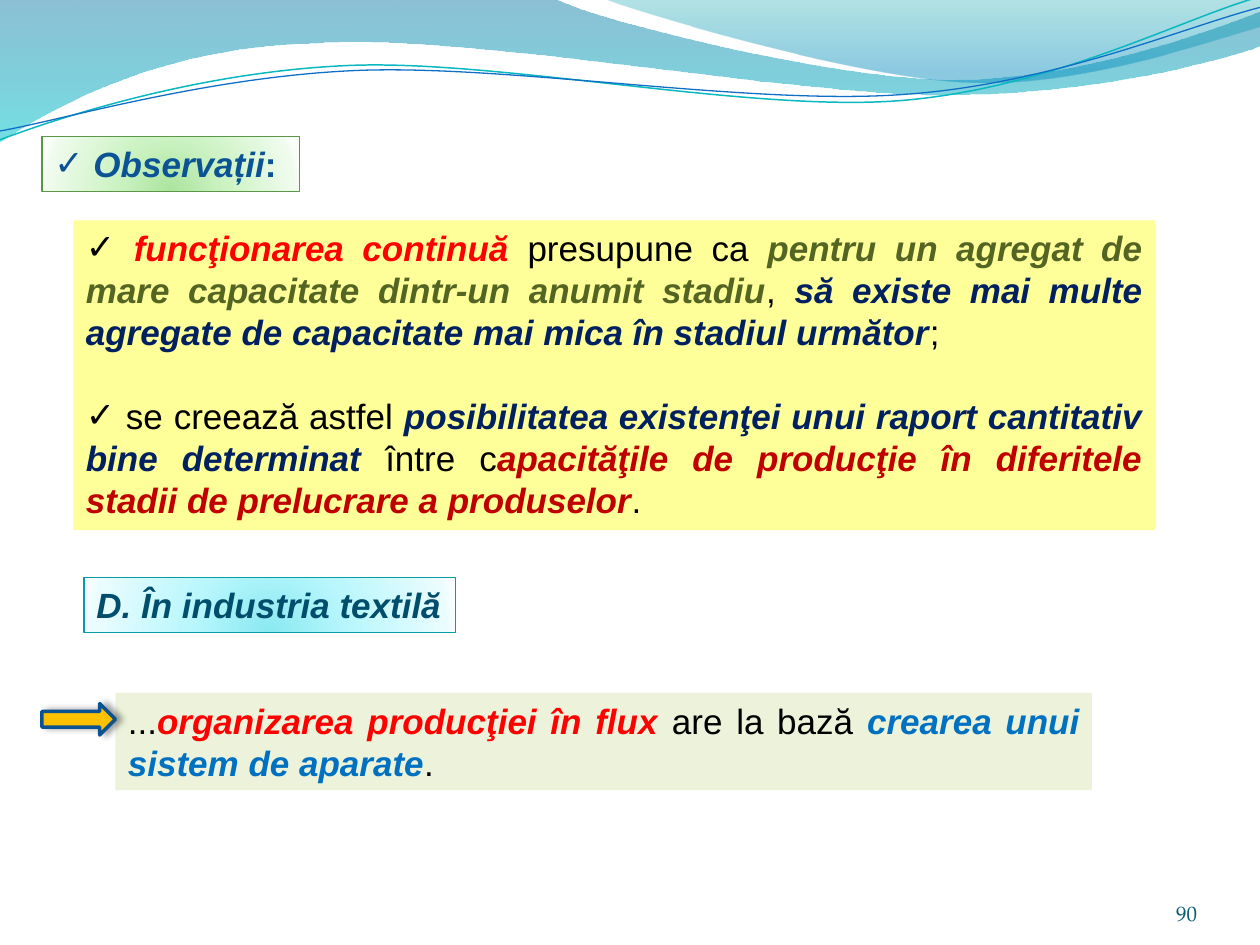
import math

import pptx
import pptx.util
import pptx.dml.color
import pptx.enum.shapes
import pptx.enum.text
import pptx.oxml
import pptx.oxml.ns

UNIT = pptx.util.Inches(1) // 12  # grid of 120 columns by 90 rows
SHAPE = pptx.enum.shapes.MSO_SHAPE
ALIGN = pptx.enum.text.PP_ALIGN
DOWN = '<a:lin ang="5400000" scaled="0"/>'
GLOW = ('<a:path path="circle"><a:fillToRect l="50000" t="130000" '
        'r="50000" b="-30000"/></a:path>')
BLACK, RED, NAVY = "000000", "FF0000", "002060"

# Each wave: start point, then straight lines (2 numbers) or curves (6),
# in tenths of the band's width and whole heights of the band.
SWELL = [(0, 0), (4.4, -0.01), (4.76, 0.17, 6.64, 0.63, 7.58, 0.63),
         (8.53, 0.63, 9.58, 0.26, 10, 0.09), (10.01, 0.36),
         (9.83, 0.44, 8.7, 0.76, 7.46, 0.75),
         (6.22, 0.75, 3.82, 0.28, 2.57, 0.34),
         (1.29, 0.36, 0.46, 0.83, -0.01, 1.13), (0, 0)]
CREST = [(4.79, -0.01), (5.09, 0.11, 6.82, 0.62, 7.69, 0.65),
         (8.56, 0.69, 9.61, 0.32, 10, 0.21), (10, 0), (4.79, -0.01)]
TEAL = [(0, 1.11), (0.48, 0.93, 1.58, 0.57, 2.77, 0.52),
        (3.95, 0.47, 5.93, 0.89, 7.13, 0.8),
        (8.33, 0.71, 9.38, 0.15, 9.98, -0.02)]
BLUE = [(0, 1.04), (0.47, 0.96, 1.64, 0.61, 2.83, 0.56),
        (4.03, 0.51, 5.97, 0.84, 7.17, 0.75),
        (8.36, 0.67, 9.41, 0.21, 10, 0.06)]


def color(code):
    return pptx.dml.color.RGBColor.from_string(code)


def node(tag, body="", attrs=""):
    space = pptx.oxml.ns.nsdecls("a")
    return pptx.oxml.parse_xml(f"<a:{tag} {space} {attrs}>{body}</a:{tag}>")


def tint(code, alpha):
    return (f'<a:srgbClr val="{code}"><a:alpha val="{alpha * 1000}"/>'
            '</a:srgbClr>')


def swap(shape, tag, new):
    old = shape._element.spPr.find(pptx.oxml.ns.qn(tag))
    old.getparent().replace(old, new)


def blend(shape, stops, way):
    """Fill with a gradient of (position, colour, opacity) stops."""
    marks = "".join(f'<a:gs pos="{pos * 1000}">{tint(code, alpha)}</a:gs>'
                    for pos, code, alpha in stops)
    shape.fill.background()
    swap(shape, "a:noFill", node("gradFill", f"<a:gsLst>{marks}</a:gsLst>{way}"))


def edge(shape, code=None, width=0.75):
    if code:
        shape.line.color.rgb = color(code)
        shape.line.width = pptx.util.Pt(width)
    else:
        shape.line.fill.background()


def block(slide, box, kind=SHAPE.RECTANGLE, fill=None, line=None, width=0.75):
    shape = slide.shapes.add_shape(kind, *(round(n * UNIT) for n in box))
    shape.shadow.inherit = False
    if fill:
        shape.fill.solid()
        shape.fill.fore_color.rgb = color(fill)
    edge(shape, line, width)
    return shape


def bend(shape, parts):
    """Join each three lines that stand for a curve into one."""
    qn = pptx.oxml.ns.qn
    lines = iter(list(shape._element.spPr.iter(qn("a:lnTo"))))
    for part in parts:
        group = [next(lines) for _ in range(len(part) // 2)]
        if len(group) == 3:
            curve = node("cubicBezTo")
            group[0].addprevious(curve)
            for line in group:
                curve.append(line[0])
                line.getparent().remove(line)


def turn(spots, angle):
    """Rotate points about the middle of their bounds."""
    mid_x, mid_y = ((min(axis) + max(axis)) / 2 for axis in zip(*spots))
    cos, sin = math.cos(math.radians(angle)), math.sin(math.radians(angle))
    return [(mid_x + (x - mid_x) * cos - (y - mid_y) * sin,
             mid_y + (x - mid_x) * sin + (y - mid_y) * cos) for x, y in spots]


def wave(slide, box, parts, stops=None, line=None, width=0.75, tilt=0):
    left, top, wide, high = box
    spots = [((left + x * wide / 10) * UNIT, (top + y * high) * UNIT)
             for part in parts for x, y in zip(part[::2], part[1::2])]
    spots = [(round(x), round(y)) for x, y in turn(spots, -tilt)]
    pen = slide.shapes.build_freeform(*spots[0])
    pen.add_line_segments(spots[1:], close=bool(stops))
    shape = pen.convert_to_shape()
    bend(shape, parts[1:])
    shape.rotation = tilt
    shape.shadow.inherit = False
    if stops:
        blend(shape, stops, DOWN)
    else:
        shape.fill.background()
    edge(shape, line, width)


def banner(slide, box):
    wave(slide, box, SWELL, [(0, "0074A1", 45), (100, "00C6CF", 55)])
    wave(slide, box, CREST, [(0, "00A1A9", 30), (80, "008BBF", 45)])
    wave(slide, box, TEAL, line="0AB8BF", width=0.85, tilt=-2.7)
    wave(slide, box, BLUE, line="0F6FC6", tilt=-2.7)


def write(shape, paras, align=ALIGN.JUSTIFY, tick=False, wrap=True, gap=0):
    """Set paragraphs of (text, colour, bold, italic) runs."""
    frame = shape.text_frame
    frame.word_wrap = wrap
    frame.auto_size = pptx.enum.text.MSO_AUTO_SIZE.SHAPE_TO_FIT_TEXT
    frame.vertical_anchor = pptx.enum.text.MSO_ANCHOR.TOP
    for i, runs in enumerate(paras):
        para = frame.add_paragraph() if i else frame.paragraphs[0]
        para.alignment = align
        if i:
            para.space_before = pptx.util.Pt(gap)
        if tick:
            props = para._p.get_or_add_pPr()
            props.append(node("buFont", attrs='typeface="Arial"'))
            props.append(node("buChar", attrs='char="✓"'))
        for text, code, bold, italic in runs:
            run = para.add_run()
            run.text = text
            font = run.font
            font.name, font.size = "Arial", pptx.util.Pt(20)
            font.bold, font.italic = bold, italic
            font.color.rgb = color(code)


def plain(text):
    return text, BLACK, False, False


def strong(text, code):
    return text, code, True, True


def label(slide, box, runs, codes, line, **style):
    shape = block(slide, box, line=line)
    blend(shape, [(pos, code, 100) for pos, code in zip((0, 43, 93, 100), codes)], GLOW)
    write(shape, [runs], wrap=False, **style)


def arrow(slide, box):
    shape = block(slide, box, SHAPE.RIGHT_ARROW, "FFC000", "0B5292", 2)
    blur, dist = int(pptx.util.Pt(4)), int(pptx.util.Pt(3))
    swap(shape, "a:effectLst", node("effectLst", (
        f'<a:outerShdw blurRad="{blur}" dist="{dist}" dir="0">'
        f'{tint(BLACK, 40)}</a:outerShdw>')))


def number(slide, box, text):
    shape = slide.shapes.add_textbox(*(round(n * UNIT) for n in box))
    frame = shape.text_frame
    frame.word_wrap = True
    frame.margin_left = frame.margin_right = 0
    frame.margin_top = frame.margin_bottom = 0
    frame.vertical_anchor = pptx.enum.text.MSO_ANCHOR.BOTTOM
    frame.text = text
    para = frame.paragraphs[0]
    para.alignment = ALIGN.RIGHT
    font = para.runs[0].font
    font.name, font.size = "TeX Gyre Pagella", pptx.util.Pt(12)
    font.color.rgb = color("045D75")


def main():
    deck = pptx.Presentation()
    deck.slide_width, deck.slide_height = 120 * UNIT, 90 * UNIT
    slide = deck.slides.add_slide(deck.slide_layouts[6])
    banner(slide, (0, 0, 120, 12))
    number(slide, (104, 83.4, 10, 4.8), "90")
    write(block(slide, (7, 21, 103, 29.5), fill="FFFF99"), [
        [plain(" "), strong("funcţionarea continuă ", RED), plain("presupune ca "),
         strong("pentru un agregat de mare capacitate dintr-un anumit stadiu", "546422"),
         plain(", "),
         strong("să existe mai multe agregate de capacitate mai mica în stadiul următor", NAVY),
         plain("; ")],
        [plain(" se creează astfel "),
         strong("posibilitatea existenţei unui raport cantitativ bine determinat", NAVY),
         plain(" între c"),
         strong("apacităţile de producţie în diferitele stadii de prelucrare a produselor",
                "C00000"), plain(".")]], tick=True, gap=24)
    label(slide, (4, 13, 24.5, 5.25),
          [strong(" Observații", "0B5394"), (":", "0B5394", True, False)],
          ("ACE49F", "CDF3C4", "EFFBED", "F9FFF8"), "5B9747", align=ALIGN.LEFT, tick=True)
    label(slide, (8, 55, 35.4, 5.25), [strong("D. În industria textilă", "004E6C")],
          ("8BE9F1", "B9F7FD", "EAFCFE", "F8FEFF"), "069CA3")
    write(block(slide, (11, 66, 93, 9.25), fill="EDF3DB"), [
        [plain("..."), strong("organizarea producţiei în flux ", RED), plain("are la bază "),
         strong("crearea unui sistem de aparate", "0070C0"), plain(".")]])
    arrow(slide, (4, 67, 7, 3))
    deck.save("out.pptx")


if __name__ == "__main__":
    main()
